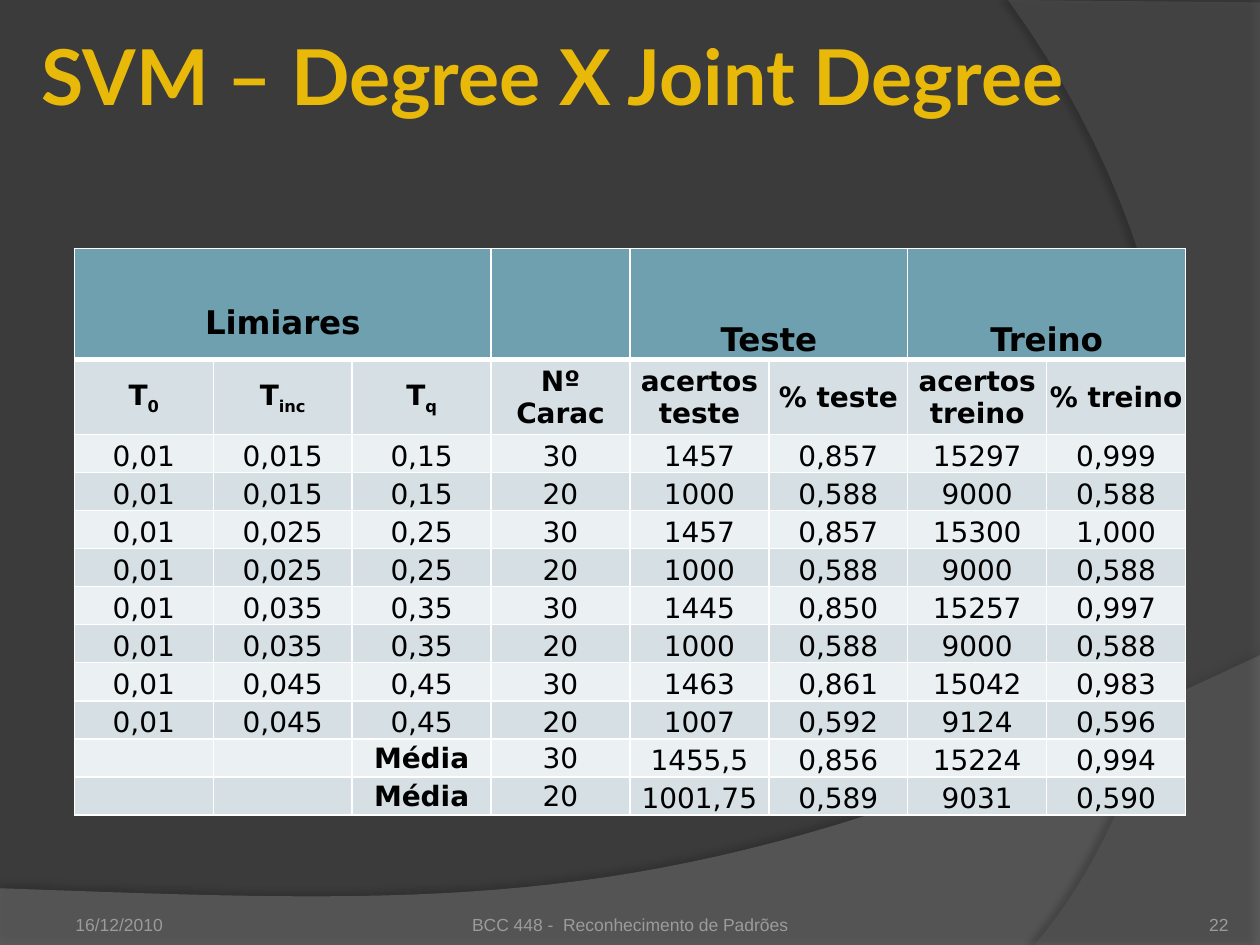
from lxml.etree import SubElement as Sub
from pptx import Presentation
from pptx.dml.color import RGBColor as RGB
from pptx.enum.text import MSO_ANCHOR as Anchor, PP_ALIGN as Align
from pptx.oxml.ns import qn
from pptx.util import Pt

BACK = RGB(0x3B, 0x3B, 0x3B)
WAVE = RGB(0x7F, 0x7F, 0x7F)
SIDE = RGB(0x5E, 0x5E, 0x5E)
GOLD = RGB(0xE9, 0xB9, 0x0A)
GREY = RGB(0x9D, 0x9B, 0x9A)
HEAD = RGB(0x6E, 0xA0, 0xB0)
BANDS = RGB(0xD5, 0xDF, 0xE4), RGB(0xEB, 0xF0, 0xF2)
WHITE = RGB(0xFF, 0xFF, 0xFF)
BLACK = RGB(0, 0, 0)

# label, first column, columns spanned, top inset that lowers the text
GROUPS = [("Limiares", 0, 3, 1), ("", 3, 1, 1),
          ("Teste", 4, 2, 21), ("Treino", 6, 2, 21)]
LABELS = [("T", "0"), ("T", "inc"), ("T", "q"), ("Nº Carac",),
          ("acertos teste",), ("% teste",),
          ("acertos treino",), ("% treino",)]
# joint threshold step: then hits and rates for 30 and for 20 features
TESTS = [
    ("15", "30 1457 0,857 15297 0,999", "20 1000 0,588 9000 0,588"),
    ("25", "30 1457 0,857 15300 1,000", "20 1000 0,588 9000 0,588"),
    ("35", "30 1445 0,850 15257 0,997", "20 1000 0,588 9000 0,588"),
    ("45", "30 1463 0,861 15042 0,983", "20 1007 0,592 9124 0,596"),
]
MEANS = ["30 1455,5 0,856 15224 0,994", "20 1001,75 0,589 9031 0,590"]


def curve(a, b, c, d, steps=40):
    """Points of a cubic Bézier after its start a, up to its end d."""
    pts = []
    for i in range(1, steps + 1):
        t = i / steps
        u = 1 - t
        pts.append(tuple(u**3 * p + 3 * u * u * t * q + 3 * u * t * t * r
                         + t**3 * s for p, q, r, s in zip(a, b, c, d)))
    return pts


def add_wave(slide, pts, color, alpha, shade, dist, angle):
    """Clear shape with a soft shadow; alpha and shade are percentages."""
    pts = [(Pt(x), Pt(y)) for x, y in pts]
    form = slide.shapes.build_freeform(*pts[0], scale=1.0)
    form.add_line_segments(pts[1:], close=True)
    wave = form.convert_to_shape()
    wave.fill.solid()
    wave.fill.fore_color.rgb = color
    wave.line.fill.background()
    wave.shadow.inherit = False
    props = wave._element.spPr
    tone = props.find(qn("a:solidFill"))[0]
    Sub(tone, qn("a:alpha"), val=str(alpha * 1000))
    cast = Sub(props.find(qn("a:effectLst")), qn("a:outerShdw"),
               blurRad=str(Pt(4)), dist=str(Pt(dist)),
               dir=str(angle * 60000), algn="ctr", rotWithShape="0")
    tone = Sub(cast, qn("a:srgbClr"), val=str(BLACK))
    Sub(tone, qn("a:alpha"), val=str(shade * 1000))


def add_backdrop(slide, wide, high):
    slide.background.fill.solid()
    slide.background.fill.fore_color.rgb = BACK
    left, right = (0, 507.6), (wide, 374.4)
    sweep = curve(right, (402.5, 524.9), (281.5, 517.7), left)
    add_wave(slide, [left, (0, high), (wide, high), right, *sweep],
             WAVE, 45, 35, 3.5, 270)
    low, peak = (591.1, high), (576, 0)
    arc = curve(low, (673.2, 445.7), (733, 216), peak)
    add_wave(slide, [(wide, 1.4), (wide, high), low, *arc],
             SIDE, 40, 45, 4, 180)


def place(shape, x, y, wide, high):
    shape.left, shape.top = Pt(x), Pt(y)
    shape.width, shape.height = Pt(wide), Pt(high)


def inset(box, left, top, right, low):
    box.margin_left, box.margin_top = Pt(left), Pt(top)
    box.margin_right, box.margin_bottom = Pt(right), Pt(low)


def style(para, face, size, color, bold=False, align=Align.LEFT):
    para.alignment = align
    font = para.font
    font.name, font.size, font.bold = face, Pt(size), bold
    font.color.rgb = color


def add_title(slide, text, *box):
    title = slide.shapes.title
    place(title, *box)
    frame = title.text_frame
    frame.text = text
    frame.vertical_anchor = Anchor.MIDDLE
    inset(frame, 3.6, 3.6, 3.6, 3.6)
    style(frame.paragraphs[0], "Lato", 44, GOLD, True)
    slide.shapes._spTree.append(title._element)  # in front of the waves


def add_footer(slide, x, y, wide, high):
    parts = [("16/12/2010", 0, 168, 7.2, Align.LEFT),
             ("BCC 448 -  Reconhecimento de Padrões", 210, 228, 0,
              Align.CENTER),
             ("22", wide - 60, 60, 0, Align.RIGHT)]
    for text, dx, span, pad, align in parts:
        box = slide.shapes.add_textbox(Pt(x + dx), Pt(y), Pt(span), Pt(high))
        frame = box.text_frame
        frame.word_wrap = True
        frame.vertical_anchor = Anchor.BOTTOM
        inset(frame, pad, 3.6, pad, 0)
        frame.text = text
        style(frame.paragraphs[0], "Arial", 10, GREY, align=align)


def add_rules(cell, low=1):
    """White borders; low is the width of the bottom one."""
    props = cell._tc.get_or_add_tcPr()
    for tag, size in ("lnL", 1), ("lnR", 1), ("lnT", 1), ("lnB", low):
        line = Sub(props, qn("a:" + tag), w=str(Pt(size)))
        Sub(Sub(line, qn("a:solidFill")), qn("a:srgbClr"), val=str(WHITE))


def fill_cell(cell, parts, color, size=16, bold=False, anchor=Anchor.MIDDLE,
              top=1, sub=1):
    """Write parts as runs; those from index sub on are subscript."""
    cell.fill.solid()
    cell.fill.fore_color.rgb = color
    cell.vertical_anchor = anchor
    inset(cell, 1, top, 1, 0)
    para = cell.text_frame.paragraphs[0]
    style(para, "DejaVu Sans", size, BLACK, bold, Align.CENTER)
    for i, text in enumerate(parts):
        run = para.add_run()
        run.text = text
        if i >= sub:
            run.font._element.set("baseline", "-25000")


def add_results(slide, x, y, wide, high):
    rows = [["0,01", "0,0" + step, "0," + step, *line.split()]
            for step, *lines in TESTS for line in lines]
    rows += [["", "", "Média", *line.split()] for line in MEANS]
    count = len(LABELS)
    grid = slide.shapes.add_table(len(rows) + 2, count, Pt(x), Pt(y),
                                  Pt(wide), Pt(high)).table
    grid.first_row = grid.horz_banding = False
    for col in grid.columns:
        col.width = Pt(wide / count)
    tops = [63.4, 42.9]
    each = (high - sum(tops)) / len(rows)
    for row, size in zip(grid.rows, tops + [each] * len(rows)):
        row.height = Pt(size)
    for i, row in enumerate(grid.rows):
        for cell in row.cells:
            add_rules(cell, 1 if i else 3)

    for text, col, span, top in GROUPS:
        cell = grid.cell(0, col)
        if span > 1:
            cell.merge(grid.cell(0, col + span - 1))
        fill_cell(cell, [text] if text else [], HEAD, 32 if text else 16,
                  True, top=top, sub=0)
    for col, parts in enumerate(LABELS):
        fill_cell(grid.cell(1, col), parts, BANDS[0], bold=True)
    for i, row in enumerate(rows, 2):
        for col, text in enumerate(row):
            mean = not row[0] and col < 4
            fill_cell(grid.cell(i, col), [text] if text else [],
                      BANDS[(i + 1) % 2], bold=text == "Média",
                      anchor=Anchor.MIDDLE if mean else Anchor.BOTTOM)


def main():
    deck = Presentation()
    deck.slide_width, deck.slide_height = Pt(720), Pt(540)
    slide = deck.slides.add_slide(deck.slide_layouts[5])
    add_backdrop(slide, 720, 540)
    add_footer(slide, 36, 505.4, 666, 28.8)
    add_title(slide, "SVM – Degree X Joint Degree", 20.2, -2.2, 680.4, 90)
    add_results(slide, 42.5, 142, 635, 324)
    deck.save("out.pptx")


if __name__ == "__main__":
    main()
